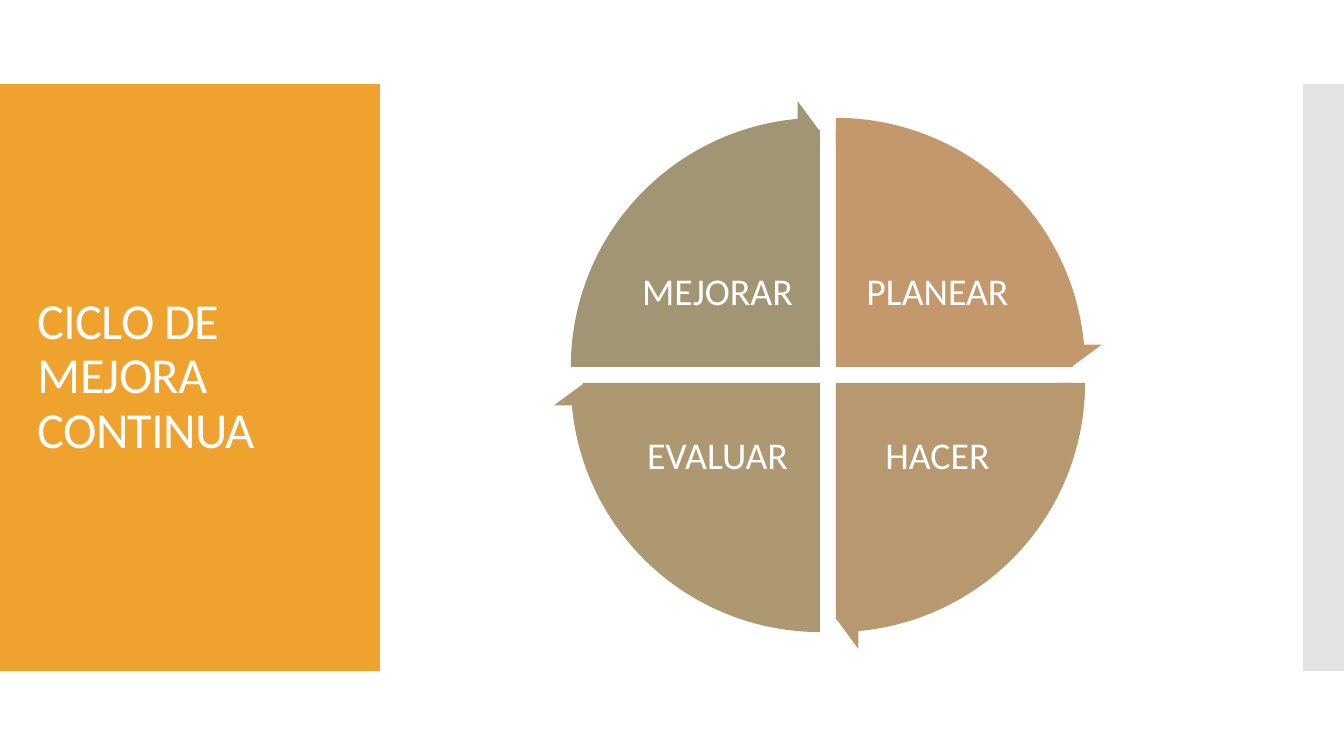
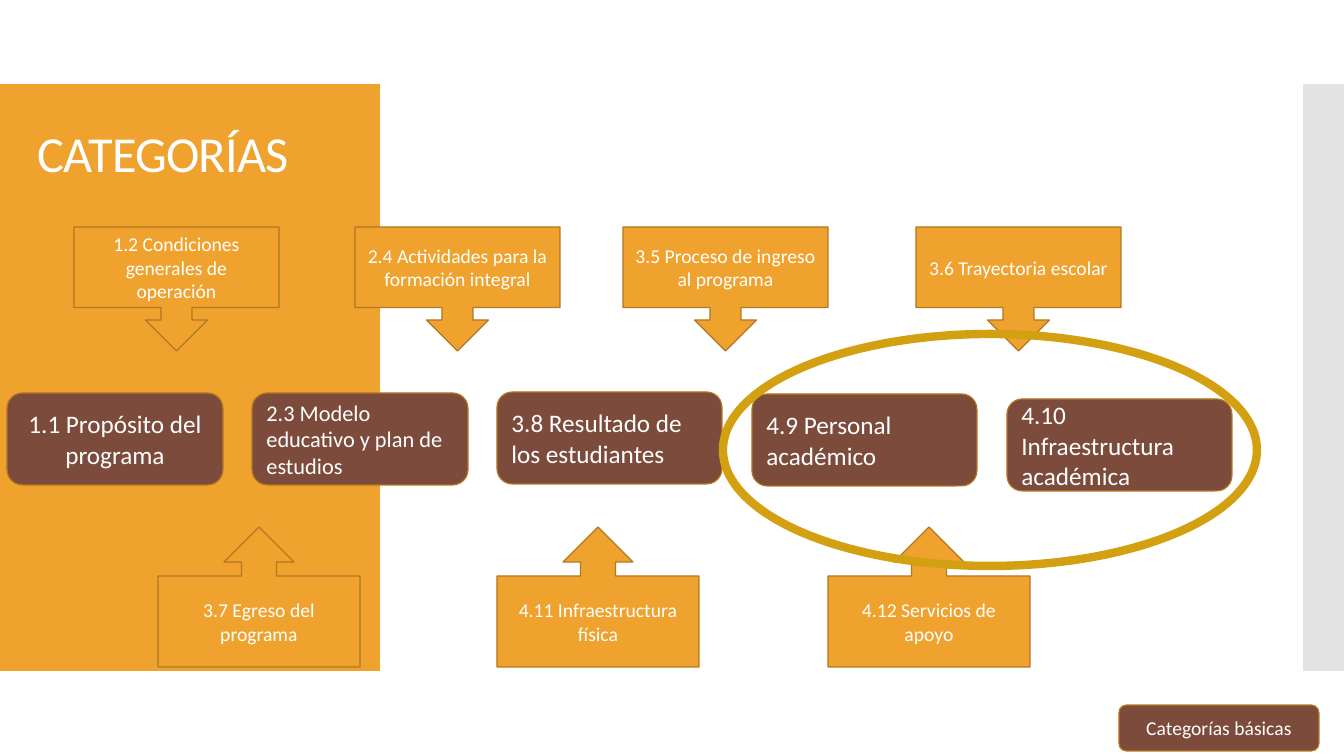
"""Builds two slides: the improvement cycle and the evaluation categories."""
from pptx import Presentation
from pptx import util as u
from pptx.dml.color import RGBColor
from pptx.enum import shapes, text

COLORS = {
    "accent": "F0A22E", "edge": "B27822", "side": "E3E3E3", "basic": "7C4B3B",
    "ring": "D2A010", "white": "FFFFFF", "planear": "C3986D", "hacer": "B8996F",
    "evaluar": "AD9871", "mejorar": "A19574",
}
WIDTH, HEIGHT = 1344, 756
SCALE = u.Inches(40 / 3) / WIDTH
FULL_TURN = 216
SHAPE = shapes.MSO_SHAPE
LEFT, CENTER = text.PP_ALIGN.LEFT, text.PP_ALIGN.CENTER
MIDDLE, TOP = text.MSO_ANCHOR.MIDDLE, text.MSO_ANCHOR.TOP


def px(n):
    return u.Emu(round(n * SCALE))


def color(name):
    return RGBColor.from_string(COLORS[name])


class Deck:
    def __init__(self):
        self.prs = Presentation()
        self.prs.slide_width, self.prs.slide_height = px(WIDTH), px(HEIGHT)
        self.s = None

    def slide(self, title, anchor):
        self.s = self.prs.slides.add_slide(self.prs.slide_layouts[6])
        self.shape(SHAPE.RECTANGLE, (0, 84, 380, 587), "accent")
        self.shape(SHAPE.RECTANGLE, (1303, 84, 41, 587), "side")
        r = self.label(title, (28, 124, 325, 507), 36, LEFT, anchor, spacing=0.9)
        r.font._element.set("spc", "-60")

    def shape(self, kind, box, fill=None, line=None, width=0.85, adj=()):
        sp = self.s.shapes.add_shape(kind, *map(px, box))
        sp.shadow.inherit = False
        if fill:
            sp.fill.solid()
            sp.fill.fore_color.rgb = color(fill)
        else:
            sp.fill.background()
        if line:
            sp.line.color.rgb = color(line)
            sp.line.width = u.Pt(width)
        else:
            sp.line.fill.background()
        for i, value in enumerate(adj):
            sp.adjustments[i] = value
        return sp

    def put_text(self, sp, words, size, align=CENTER, anchor=MIDDLE, spacing=1.0):
        tf = sp.text_frame
        tf.word_wrap, tf.vertical_anchor = True, anchor
        p = tf.paragraphs[0]
        p.alignment, p.line_spacing = align, spacing
        r = p.add_run()
        r.text = words
        for key, value in {"name": "Calibri", "size": u.Pt(size)}.items():
            setattr(r.font, key, value)
        r.font.color.rgb = color("white")
        return r

    def label(self, words, box, size, align=CENTER, anchor=MIDDLE, spacing=1.0):
        sp = self.s.shapes.add_textbox(*map(px, box))
        return self.put_text(sp, words, size, align, anchor, spacing)

    def box(self, kind, words, box, fill, size, align=CENTER):
        self.put_text(self.shape(kind, box, fill, "edge"), words, size, align)

    def quadrant(self, words, dx, dy, start, end):
        cx, cy = 828 + 8 * dx, 375 + 8 * dy
        self.shape(SHAPE.PIE, (cx - 237, cy - 237, 474, 474), words.lower(),
                   adj=(start, end))
        self.label(words, (740 + 110 * dx, 310 + 82 * dy, 175, 130), 27, spacing=0.9)

    def arc(self, words, dx, dy, start, end):
        cx, cy = 828 + 8 * dx, 375 + 8 * dy
        head = 3.275
        self.shape(SHAPE.CIRCULAR_ARROW, (cx - 267, cy - 267, 534, 534), words.lower(),
                   adj=(0.051, head, (end - head) % FULL_TURN, start, 0.059))


def cycle(deck):
    deck.slide("CICLO DE MEJORA CONTINUA", MIDDLE)
    steps = [
        ("PLANEAR", 1, -1, 162, 0),
        ("HACER", 1, 1, 0, 54),
        ("EVALUAR", -1, 1, 54, 108),
        ("MEJORAR", -1, -1, 108, 162),
    ]
    for draw in (deck.quadrant, deck.arc):
        for step in steps:
            draw(*step)


def categories(deck):
    deck.slide("CATEGORÍAS", TOP)
    above = [
        ("1.2 Condiciones generales de operación", 74),
        ("2.4 Actividades para la formación integral", 355),
        ("3.5 Proceso de ingreso al programa", 623),
        ("3.6 Trayectoria escolar", 916),
    ]
    below = [
        ("3.7 Egreso del programa", 158),
        ("4.11 Infraestructura física", 497),
        ("4.12 Servicios de apoyo", 828),
    ]
    rows = [
        (SHAPE.DOWN_ARROW_CALLOUT, above, 227, 205, 124),
        (SHAPE.UP_ARROW_CALLOUT, below, 527, 202, 140),
    ]
    for kind, items, y, w, h in rows:
        for words, x in items:
            deck.box(kind, words, (x, y, w, h), "accent", 14)
    basics = [
        ("1.1 Propósito del programa", (7, 393, 216, 92), 18, CENTER),
        ("2.3 Modelo educativo y plan de estudios", (252, 393, 216, 92), 16, LEFT),
        ("3.8 Resultado de los estudiantes", (497, 392, 225, 92), 18, LEFT),
        ("4.9 Personal académico", (752, 394, 225, 92), 18, LEFT),
        ("4.10 Infraestructura académica", (1007, 399, 225, 92), 18, LEFT),
        ("Categorías básicas", (1119, 705, 200, 46), 14, CENTER),
    ]
    for words, box, size, align in basics:
        deck.box(SHAPE.ROUNDED_RECTANGLE, words, box, "basic", size, align)
    deck.shape(SHAPE.OVAL, (723, 334, 534, 232), line="ring", width=6)


def main():
    deck = Deck()
    cycle(deck)
    categories(deck)
    deck.prs.save("out.pptx")


if __name__ == "__main__":
    main()
